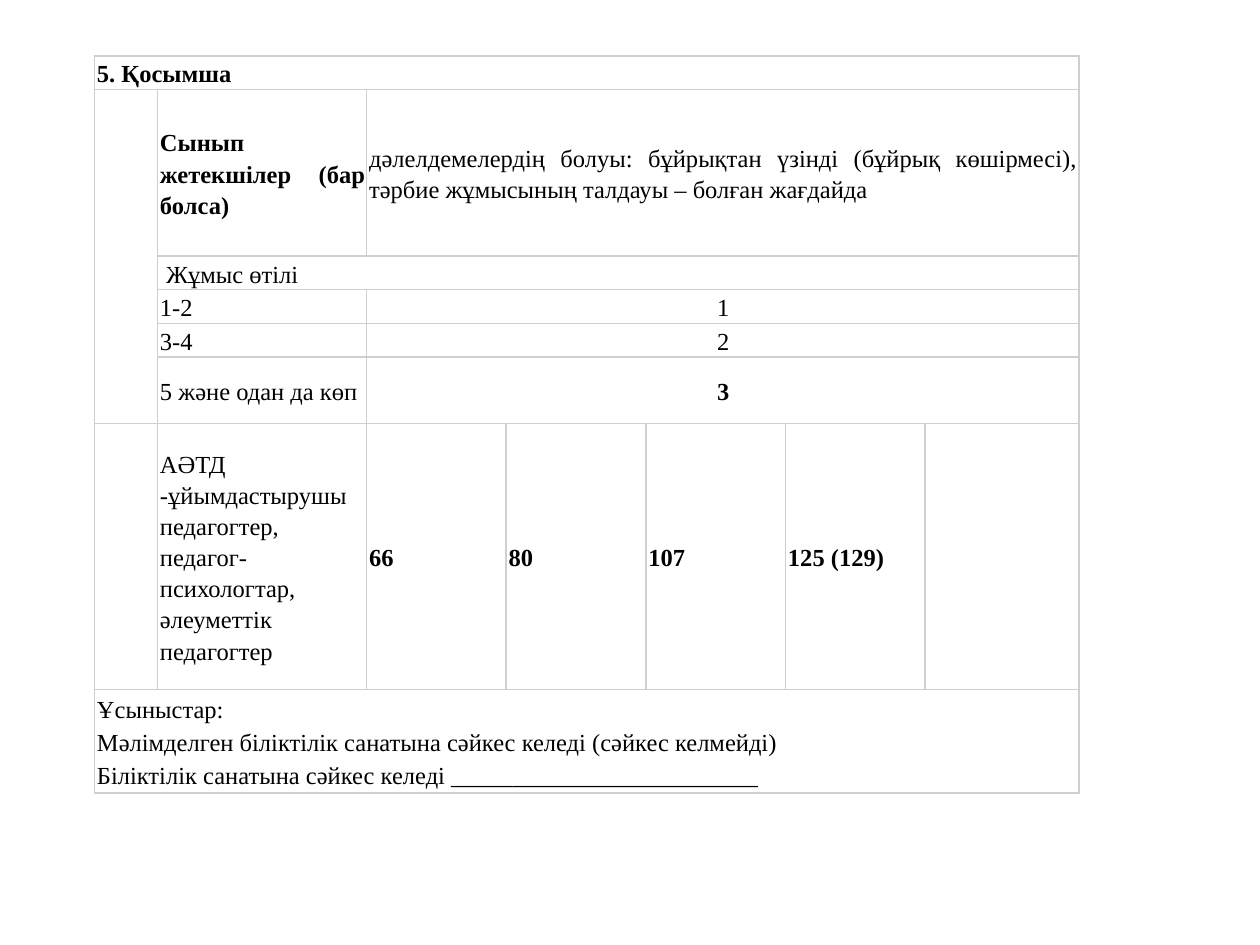
from pptx import Presentation
from pptx.dml.color import RGBColor
from pptx.enum.text import MSO_ANCHOR as Anchor, PP_ALIGN as Align
from pptx.oxml.ns import qn
from pptx.util import Pt
from lxml.etree import SubElement

INSET = 0.72
JUSTIFY, CENTER = Align.JUSTIFY, Align.CENTER


def color(hex_code):
    return RGBColor.from_string(hex_code)


class SlideBuilder:
    font = "Times New Roman"
    size = 14
    ink = "000000"
    rule = "CFCFCF"

    def __init__(self, slide):
        self.slide = slide

    def table(self, left, top, widths, heights):
        frame = self.slide.shapes.add_table(
            len(heights), len(widths), Pt(left), Pt(top),
            Pt(sum(widths)), Pt(sum(heights)))
        grid = frame.table
        grid.first_row = grid.horz_banding = False
        for column, width in zip(grid.columns, widths):
            column.width = Pt(width)
        for row, height in zip(grid.rows, heights):
            row.height = Pt(height)
        for cell in grid.iter_cells():
            self.frame_cell(cell)
        return grid

    def frame_cell(self, cell):
        props = cell._tc.get_or_add_tcPr()
        for side in ("a:lnL", "a:lnR", "a:lnT", "a:lnB"):
            line = SubElement(props, qn(side), w=str(Pt(1)))
            fill = SubElement(line, qn("a:solidFill"))
            SubElement(fill, qn("a:srgbClr"), val=self.rule)
        cell.fill.background()
        cell.vertical_anchor = Anchor.MIDDLE
        cell.margin_left = cell.margin_right = Pt(INSET)
        cell.margin_top = cell.margin_bottom = Pt(INSET)

    def cell_text(self, cell, text, bold=False, align=JUSTIFY):
        cell.text_frame.text = text
        for paragraph in cell.text_frame.paragraphs:
            paragraph.alignment = align
            paragraph.line_spacing = 1.15
            paragraph.space_after = Pt(1)
            indent = paragraph._p.get_or_add_pPr()
            indent.set("marL", str(Pt(INSET)))
            indent.set("indent", "0")
            for run in paragraph.runs:
                run.font.name = self.font
                run.font.size = Pt(self.size)
                run.font.bold = bold
                run.font.color.rgb = color(self.ink)


def main():
    deck = Presentation()
    deck.slide_width, deck.slide_height = Pt(720), Pt(540)
    builder = SlideBuilder(deck.slides.add_slide(deck.slide_layouts[6]))

    # Score grid
    line = 18.72
    scores = builder.table(
        54, 31.9, [36, 119.5] + [79.8] * 4 + [87.8],
        [line, 95.2, line, line, line, 38, 152, 59.2])

    # Merged areas: first and last row, first column, wide cells of section 5
    for top, left, bottom, right in [
            (0, 0, 0, 6), (1, 0, 5, 0), (2, 1, 2, 6), (7, 0, 7, 6),
            *((row, 2, row, 6) for row in (1, 3, 4, 5))]:
        scores.cell(top, left).merge(scores.cell(bottom, right))

    # Wording: row, column, text, bold, alignment
    entries = [
        (0, 0, "5. Қосымша", True, JUSTIFY),
        (1, 1, "Сынып жетекшілер (бар болса)", True, JUSTIFY),
        (1, 2, "дәлелдемелердің болуы: бұйрықтан үзінді (бұйрық көшірмесі), "
               "тәрбие жұмысының талдауы – болған жағдайда", False, JUSTIFY),
        (2, 1, " Жұмыс өтілі", False, JUSTIFY),
        (3, 1, "1-2", False, JUSTIFY),
        (3, 2, "1", False, CENTER),
        (4, 1, "3-4", False, JUSTIFY),
        (4, 2, "2", False, CENTER),
        (5, 1, "5 және одан да көп", False, JUSTIFY),
        (5, 2, "3", True, CENTER),
        (6, 1, "АӘТД -ұйымдастырушы педагогтер, педагог- психологтар, "
               "әлеуметтік педагогтер", False, JUSTIFY),
        (7, 0, "Ұсыныстар:\n"
               "Мәлімделген біліктілік санатына сәйкес келеді (сәйкес келмейді)\n"
               "Біліктілік санатына сәйкес келеді " + "_" * 25, False, JUSTIFY),
    ]
    for row, column, text, bold, align in entries:
        builder.cell_text(scores.cell(row, column), text, bold, align)

    # Total points by category
    for column, points in enumerate(["66", "80", "107", "125 (129)"], start=2):
        builder.cell_text(scores.cell(6, column), points, bold=True)

    deck.save("out.pptx")


if __name__ == "__main__":
    main()
